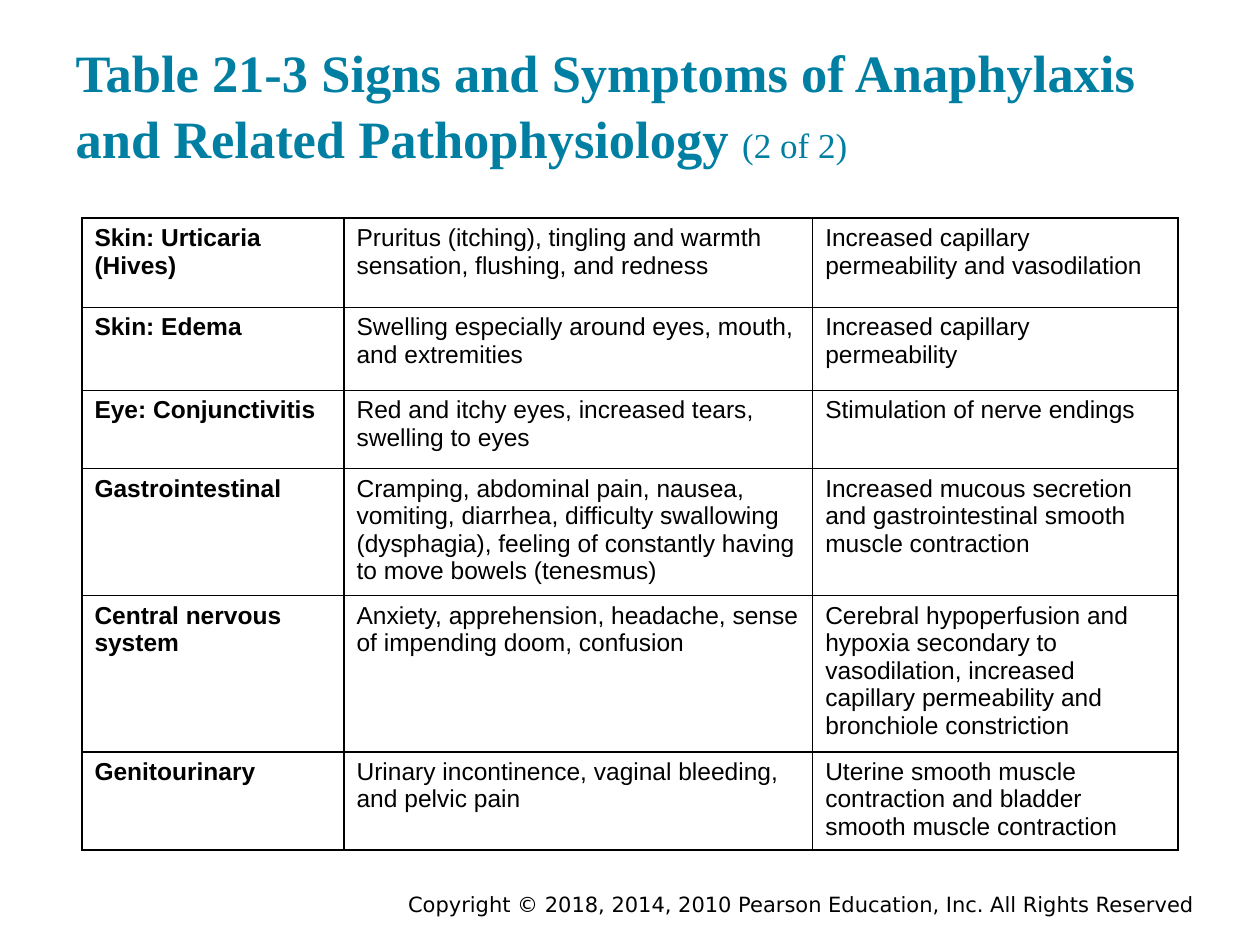
from dataclasses import dataclass

from lxml import etree
from pptx import Presentation
from pptx.dml.color import RGBColor
from pptx.enum import text
from pptx.oxml import ns
from pptx.util import Pt


@dataclass(frozen=True)
class Theme:
    teal: RGBColor = RGBColor(0x00, 0x7F, 0xA3)
    black: RGBColor = RGBColor(0, 0, 0)
    title_font: str = "Times New Roman"
    body_font: str = "Arial"
    footer_font: str = "DejaVu Sans"
    title_size: float = 30
    part_size: float = 20
    body_size: float = 14
    footer_size: float = 12
    border: float = 1


@dataclass(frozen=True)
class Sign:
    system: str
    symptoms: str
    cause: str
    height: float


THEME = Theme()
COLUMN_WIDTHS = (149.8, 267.8, 208.8)
SIGNS = (
    Sign("Skin: Urticaria (Hives)",
         "Pruritus (itching), tingling and warmth sensation, flushing, and redness",
         "Increased capillary permeability and vasodilation", 51),
    Sign("Skin: Edema",
         "Swelling especially around eyes, mouth, and extremities",
         "Increased capillary permeability", 47.5),
    Sign("Eye: Conjunctivitis",
         "Red and itchy eyes, increased tears, swelling to eyes",
         "Stimulation of nerve endings", 44.6),
    Sign("Gastrointestinal",
         "Cramping, abdominal pain, nausea, vomiting, diarrhea, difficulty swallowing "
         "(dysphagia), feeling of constantly having to move bowels (tenesmus)",
         "Increased mucous secretion and gastrointestinal smooth muscle contraction", 72.7),
    Sign("Central nervous system",
         "Anxiety, apprehension, headache, sense of impending doom, confusion",
         "Cerebral hypoperfusion and hypoxia secondary to vasodilation, increased "
         "capillary permeability and bronchiole constriction", 89.3),
    Sign("Genitourinary",
         "Urinary incontinence, vaginal bleeding, and pelvic pain",
         "Uterine smooth muscle contraction and bladder smooth muscle contraction", 56.2),
)


def set_font(font, name: str, size: float, color: RGBColor, bold: bool = False) -> None:
    font.name, font.size, font.bold = name, Pt(size), bold
    font.color.rgb = color


def add_borders(cell) -> None:
    tc_pr = cell._tc.get_or_add_tcPr()
    for i, side in enumerate(("lnL", "lnR", "lnT", "lnB")):
        ln = etree.Element(ns.qn(f"a:{side}"), w=str(Pt(THEME.border)))
        fill = etree.SubElement(ln, ns.qn("a:solidFill"))
        etree.SubElement(fill, ns.qn("a:srgbClr"), val=str(THEME.black))
        tc_pr.insert(i, ln)  # borders come before the fill


def set_title(s) -> None:
    sp = s.shapes.title
    sp.left, sp.top, sp.width, sp.height = Pt(36), Pt(17.3), Pt(648), Pt(86.4)
    tf = sp.text_frame
    tf.word_wrap = True
    tf.auto_size = text.MSO_AUTO_SIZE.NONE
    tf.vertical_anchor = text.MSO_ANCHOR.BOTTOM
    tf.margin_left = tf.margin_right = tf.margin_top = tf.margin_bottom = Pt(7.2)
    p = tf.paragraphs[0]
    p.alignment = text.PP_ALIGN.LEFT
    p.line_spacing = 1.04
    for words, size, bold in (
        ("Table 21-3 Signs and Symptoms of Anaphylaxis and Related Pathophysiology ",
         THEME.title_size, True),
        ("(2 of 2)", THEME.part_size, False),
    ):
        r = p.add_run()
        r.text = words
        set_font(r.font, THEME.title_font, size, THEME.teal, bold)


def add_signs_table(s) -> None:
    table = s.shapes.add_table(
        len(SIGNS), len(COLUMN_WIDTHS), Pt(46.8), Pt(124.6),
        Pt(sum(COLUMN_WIDTHS)), Pt(sum(sign.height for sign in SIGNS))).table
    table.first_row = table.horz_banding = False
    for column, width in zip(table.columns, COLUMN_WIDTHS):
        column.width = Pt(width)
    for row, sign in zip(table.rows, SIGNS):
        row.height = Pt(sign.height)
        for i, words in enumerate((sign.system, sign.symptoms, sign.cause)):
            cell = row.cells[i]
            cell.text = words
            cell.fill.background()
            add_borders(cell)
            set_font(cell.text_frame.paragraphs[0].font, THEME.body_font,
                     THEME.body_size, THEME.black, bold=i == 0)


def add_copyright(s) -> None:
    tf = s.shapes.add_textbox(Pt(210.2), Pt(507.6), Pt(479.5), Pt(18)).text_frame
    tf.word_wrap = True
    tf.vertical_anchor = text.MSO_ANCHOR.MIDDLE
    p = tf.paragraphs[0]
    p.text = "Copyright © 2018, 2014, 2010 Pearson Education, Inc. All Rights Reserved"
    p.alignment = text.PP_ALIGN.RIGHT
    set_font(p.font, THEME.footer_font, THEME.footer_size, THEME.black)


def main() -> None:
    prs = Presentation()
    prs.slide_width, prs.slide_height = Pt(720), Pt(540)
    s = prs.slides.add_slide(prs.slide_layouts.get_by_name("Title Only"))
    set_title(s)
    add_signs_table(s)
    add_copyright(s)
    prs.save("out.pptx")


if __name__ == "__main__":
    main()
